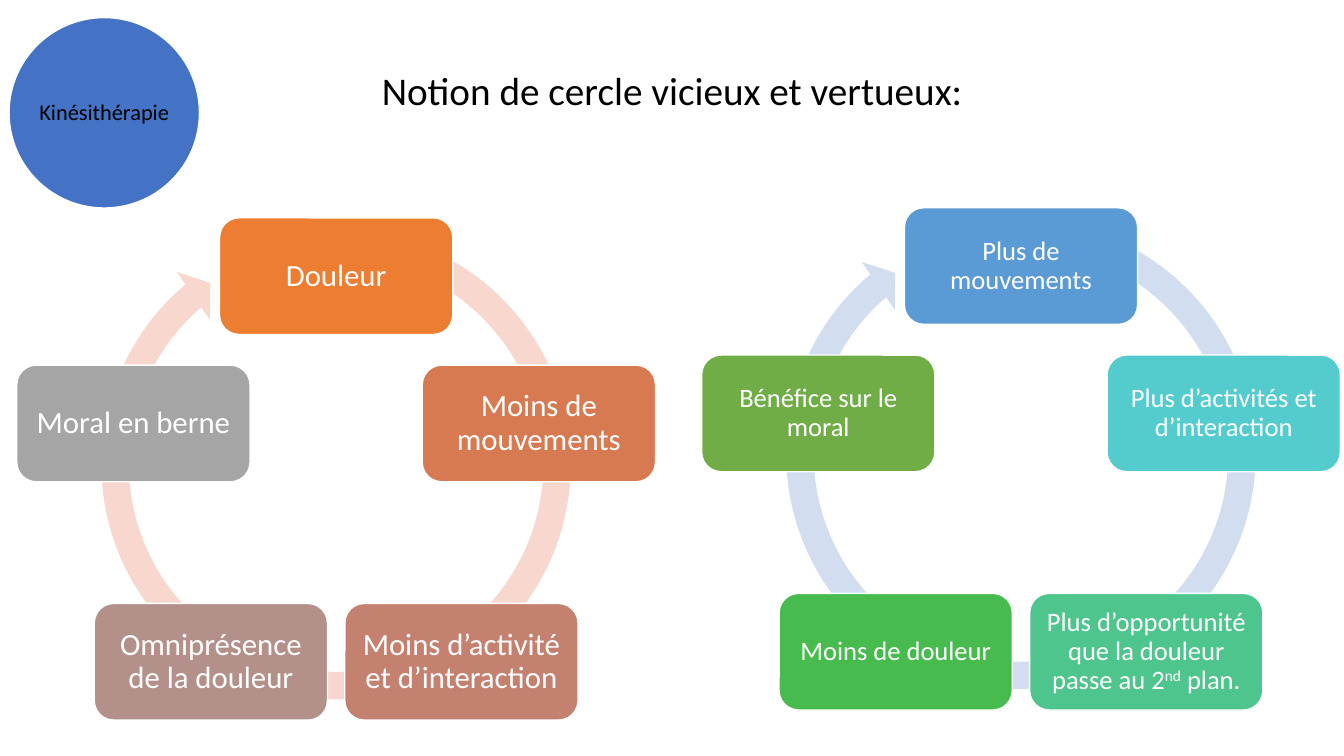
import math
from dataclasses import dataclass

import pptx
import pptx.dml.color
import pptx.enum.shapes
import pptx.enum.text
import pptx.util

Pt = pptx.util.Pt
SHAPES = pptx.enum.shapes.MSO_SHAPE


@dataclass(frozen=True)
class Theme:
    font: str = "Calibri"
    dark: str = "000000"
    light: str = "FFFFFF"
    badge: str = "4472C4"
    title_size: float = 28
    badge_size: float = 16
    vicious_size: float = 22
    virtuous_size: float = 19
    vicious_ring: str = "F8D7CE"
    virtuous_ring: str = "D2DEEF"
    vicious_steps: tuple[str, ...] = ("ED7D31", "D87A51", "C48170", "B4908B", "A5A5A5")
    virtuous_steps: tuple[str, ...] = ("5B9BD5", "54CCCD", "4DC58D", "48BB4F", "70AD47")


@dataclass(frozen=True)
class Run:
    text: str
    superscript: bool = False


@dataclass(frozen=True)
class Cycle:
    cx: float
    cy: float
    ring: str
    colors: tuple[str, ...]
    size: float
    inset: float
    steps: tuple[tuple[Run, ...], ...]


THEME = Theme()
STEP_W, STEP_H = 166.6, 83.3
STEP_RADIUS = 152.25
RING_SIZE, RING_RISE = 357.1, 17.6
RING_ADJUSTMENTS = (0.055, 3.307, 137.866, 173.795, 0.058)

CYCLES = (
    Cycle(240.1, 349.5, THEME.vicious_ring, THEME.vicious_steps, THEME.vicious_size, 6.6, (
        (Run("Douleur"),),
        (Run("Moins de mouvements"),),
        (Run("Moins d’activité et d’interaction"),),
        (Run("Omniprésence de la douleur"),),
        (Run("Moral en berne"),),
    )),
    Cycle(729.3, 342.3, THEME.virtuous_ring, THEME.virtuous_steps, THEME.virtuous_size, 5.7, (
        (Run("Plus de mouvements"),),
        (Run("Plus d’activités et d’interaction"),),
        (Run("Plus d’opportunité que la douleur passe au 2"), Run("nd", True), Run(" plan.")),
        (Run("Moins de douleur"),),
        (Run("Bénéfice sur le moral"),),
    )),
)


def rgb(color: str) -> pptx.dml.color.RGBColor:
    return pptx.dml.color.RGBColor.from_string(color)


def add_runs(tf, runs: tuple[Run, ...], size: float, color: str) -> None:
    tf.word_wrap = True
    p = tf.paragraphs[0]
    p.alignment = pptx.enum.text.PP_ALIGN.CENTER
    for run in runs:
        r = p.add_run()
        r.text = run.text
        r.font.name = THEME.font
        r.font.size = Pt(size)
        r.font.color.rgb = rgb(color)
        if run.superscript:
            r.font._element.set("baseline", "30000")


def add_figure(s, kind, cx: float, cy: float, w: float, h: float, fill: str):
    sp = s.shapes.add_shape(kind, Pt(cx - w / 2), Pt(cy - h / 2), Pt(w), Pt(h))
    sp.shadow.inherit = False
    sp.fill.solid()
    sp.fill.fore_color.rgb = rgb(fill)
    sp.line.fill.background()
    return sp


def add_label(sp, runs: tuple[Run, ...], size: float, color: str, inset: float) -> None:
    sp.line.color.rgb = rgb(THEME.light)
    sp.line.width = Pt(1)
    tf = sp.text_frame
    tf.margin_left = tf.margin_right = tf.margin_top = tf.margin_bottom = Pt(inset)
    tf.vertical_anchor = pptx.enum.text.MSO_ANCHOR.MIDDLE
    add_runs(tf, runs, size, color)
    tf.paragraphs[0].line_spacing = 0.9


def add_cycle(s, cycle: Cycle) -> None:
    ring = add_figure(s, SHAPES.CIRCULAR_ARROW, cycle.cx, cycle.cy - RING_RISE,
                      RING_SIZE, RING_SIZE, cycle.ring)
    for i, value in enumerate(RING_ADJUSTMENTS):
        ring.adjustments[i] = value
    for i, (runs, color) in enumerate(zip(cycle.steps, cycle.colors)):
        angle = math.tau * i / len(cycle.steps)
        sp = add_figure(s, SHAPES.ROUNDED_RECTANGLE,
                        cycle.cx + STEP_RADIUS * math.sin(angle),
                        cycle.cy - STEP_RADIUS * math.cos(angle),
                        STEP_W, STEP_H, color)
        add_label(sp, runs, cycle.size, THEME.light, cycle.inset)


def main() -> None:
    """Build the slide on vicious and virtuous circles."""
    prs = pptx.Presentation()
    prs.slide_width, prs.slide_height = Pt(960), Pt(540)
    s = prs.slides.add_slide(prs.slide_layouts[6])
    badge = add_figure(s, SHAPES.OVAL, 74.5, 80.6, 136, 136, THEME.badge)
    add_label(badge, (Run("Kinésithérapie"),), THEME.badge_size, THEME.dark, 1.6)
    title = s.shapes.add_textbox(Pt(230), Pt(44), Pt(500), Pt(41))
    add_runs(title.text_frame, (Run("Notion de cercle vicieux et vertueux:"),),
             THEME.title_size, THEME.dark)
    for cycle in CYCLES:
        add_cycle(s, cycle)
    prs.save("out.pptx")


if __name__ == "__main__":
    main()
